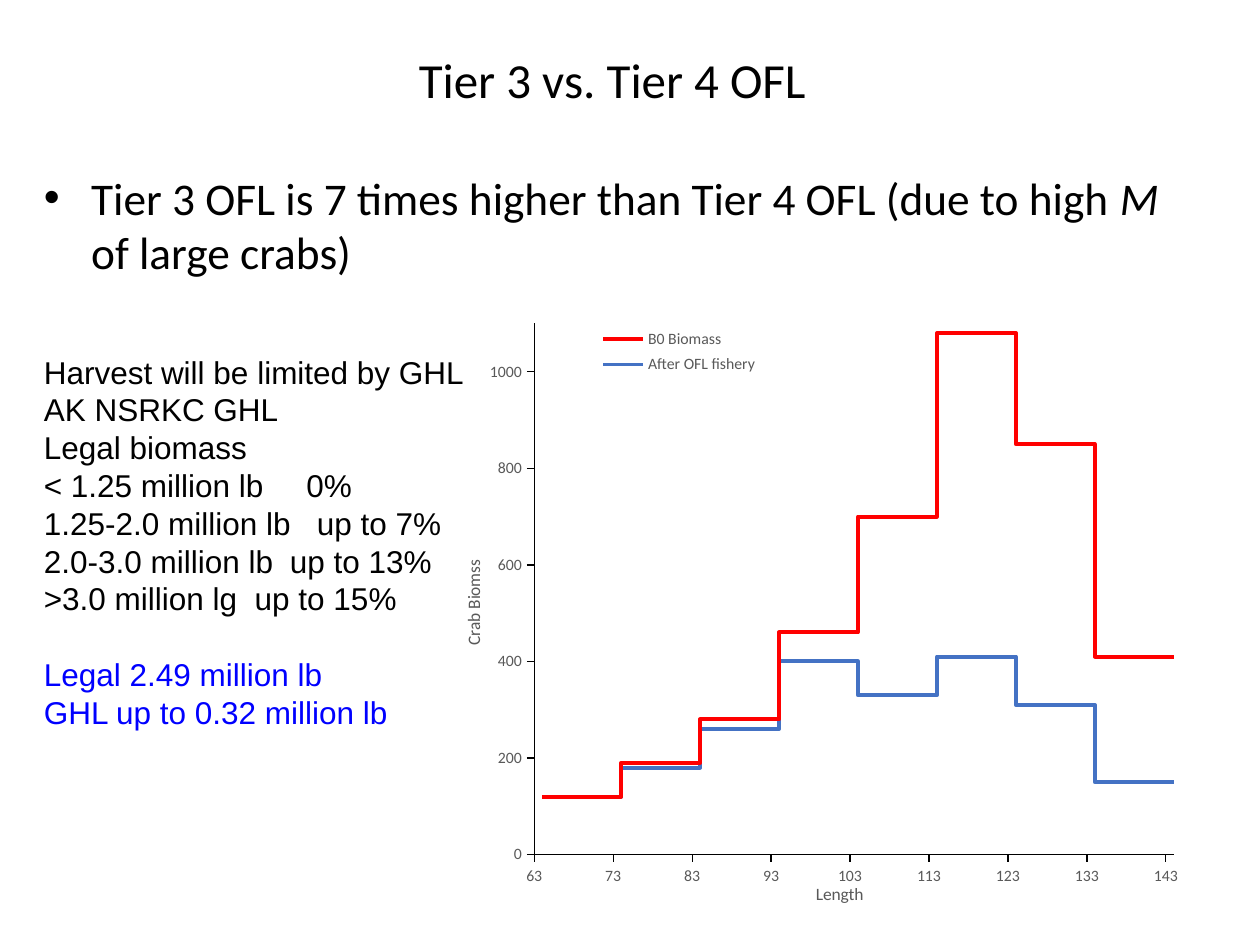
from pptx import Presentation
from pptx.chart.data import XyChartData
from pptx.dml.color import RGBColor
from pptx.enum.chart import XL_CHART_TYPE, XL_LEGEND_POSITION, XL_TICK_MARK
from pptx.enum.text import MSO_ANCHOR, PP_ALIGN
from pptx.oxml import parse_xml
from pptx.oxml.ns import nsdecls, qn
from pptx.util import Pt

SCATTER = XL_CHART_TYPE.XY_SCATTER_LINES_NO_MARKERS
BOTTOM = XL_LEGEND_POSITION.BOTTOM
OUTSIDE, NO_TICK = XL_TICK_MARK.OUTSIDE, XL_TICK_MARK.NONE
MIDDLE, TOP = MSO_ANCHOR.MIDDLE, MSO_ANCHOR.TOP
CENTER, LEFT = PP_ALIGN.CENTER, PP_ALIGN.LEFT

COLORS = {"black": "000000", "grey": "595959", "red": "FF0000",
          "steel": "4472C4", "blue": "0000FF"}

LENGTH_EDGES = range(64, 145, 10)
BIOMASS = [
    ("B0 Biomass", "red", [120, 190, 280, 460, 700, 1080, 850, 410]),
    ("After OFL fishery ", "steel", [120, 180, 260, 400, 330, 410, 310, 150]),
]

# Text, tab stop, paragraph format, colour
HARVEST_RULES = [
    ("Harvest will be limited by GHL", None, {}, "black"),
    ("AK NSRKC GHL", None, {}, "black"),
    ("Legal biomass", None, {}, "black"),
    ("< 1.25 million lb\t0%", 150, {}, "black"),
    ("1.25-2.0 million lb\tup to 7%", 156, {}, "black"),
    ("2.0-3.0 million lb\tup to 13%", 140.5, {}, "black"),
    (">3.0 million lg\tup to 15%", 120.5, {}, "black"),
    ("Legal 2.49 million lb", None, {"space_before": Pt(21.6)}, "blue"),
    ("GHL up to 0.32 million lb", None, {}, "blue"),
]


def rgb(name):
    return RGBColor.from_string(COLORS[name])


def set_all(obj, values):
    for name, value in values.items():
        setattr(obj, name, value)


def place(parent, index, box, inner=False):
    """Give a chart part a fixed place, as fractions of the chart."""
    for old in parent.findall(qn("c:layout")):
        parent.remove(old)
    target = '<c:layoutTarget val="inner"/>' if inner else ""
    modes = "".join(f'<c:{n}Mode val="edge"/>' for n in "xy")
    sizes = "".join(f'<c:{n} val="{v}"/>' for n, v in zip("xywh", box))
    parent.insert(index, parse_xml(
        f'<c:layout {nsdecls("c")}><c:manualLayout>{target}{modes}{sizes}'
        "</c:manualLayout></c:layout>"))


class Deck:
    def __init__(self, slide):
        self.s = slide
        self.heading_font = "Calibri"
        self.body_font = "Arial"

    def style(self, font, size, color="black", name=None, **extra):
        set_all(font, {"name": name or self.heading_font, "size": Pt(size), **extra})
        font.color.rgb = rgb(color)

    def text_box(self, box, wrap=True, anchor=TOP):
        tf = self.s.shapes.add_textbox(*map(Pt, box)).text_frame
        set_all(tf, {"word_wrap": wrap, "vertical_anchor": anchor})
        return tf

    def title(self, text, box):
        p = self.text_box(box, anchor=MIDDLE).paragraphs[0]
        p.alignment = CENTER
        r = p.add_run()
        r.text = text
        self.style(r.font, 28)

    def bullet(self, runs, box):
        p = self.text_box(box).paragraphs[0]
        pPr = p._p.get_or_add_pPr()
        pPr.set("marL", str(Pt(27)))
        pPr.set("indent", str(Pt(-27)))
        pPr.append(parse_xml(f'<a:buFont {nsdecls("a")} typeface="Arial"/>'))
        pPr.append(parse_xml(f'<a:buChar {nsdecls("a")} char="•"/>'))
        for text, italic in runs:
            r = p.add_run()
            r.text = text
            self.style(r.font, 25.9, italic=italic)

    def rules(self, lines, box):
        tf = self.text_box(box, wrap=False)
        for i, (text, stop, fmt, color) in enumerate(lines):
            p = tf.add_paragraph() if i else tf.paragraphs[0]
            set_all(p, {"alignment": LEFT, "line_spacing": Pt(21.6), **fmt})
            if stop:
                p._p.get_or_add_pPr().append(parse_xml(
                    f'<a:tabLst {nsdecls("a")}><a:tab pos="{Pt(stop)}" algn="l"/></a:tabLst>'))
            r = p.add_run()
            r.text = text
            self.style(r.font, 18, color, self.body_font)

    def axis(self, axis, title, scale, title_at, rotation):
        set_all(axis, {"has_major_gridlines": False, "major_tick_mark": OUTSIDE,
                       "minor_tick_mark": NO_TICK, **scale})
        self.style(axis.tick_labels.font, 9, "grey")
        axis.format.line.width = Pt(0.75)
        axis.format.line.color.rgb = rgb("black")
        tf = axis.axis_title.text_frame
        r = tf.paragraphs[0].add_run()
        r.text = title
        self.style(r.font, 10, "grey", bold=False)
        element = axis.axis_title._element
        element.find(".//" + qn("a:bodyPr")).set("rot", str(rotation))
        place(element, 1, title_at)

    def step_chart(self, edges, series, box):
        """Draw each value as a level line between two neighbouring edges."""
        data = XyChartData()
        for name, _, values in series:
            points = data.add_series(name)
            for left, right, value in zip(edges, edges[1:], values):
                points.add_data_point(left, value)
                points.add_data_point(right, value)
        chart = self.s.shapes.add_chart(SCATTER, *map(Pt, box), data).chart
        set_all(chart, {"has_title": False, "has_legend": True})
        self.style(chart.font, 10)
        plot = chart.plots[0]
        plot.vary_by_categories = False
        for line, (_, color, _) in zip(plot.series, series):
            line.smooth = False
            line.format.line.width = Pt(2.25)
            line.format.line.color.rgb = rgb(color)
        self.axis(chart.category_axis, "Length",
                  {"minimum_scale": 63, "maximum_scale": 144, "major_unit": 10},
                  (0.48, 0.96), 0)
        self.axis(chart.value_axis, "Crab Biomss",
                  {"minimum_scale": 0, "maximum_scale": 1100, "major_unit": 200},
                  (0.01, 0.45), -5400000)
        set_all(chart.legend, {"position": BOTTOM, "include_in_layout": False})
        self.style(chart.legend.font, 9, "grey")
        place(chart.legend._element, 1, (0.18, 0.08, 0.25, 0.09))
        place(plot._element.getparent(), 0, (0.11, 0.08, 0.85, 0.84), inner=True)


def main():
    prs = Presentation()
    set_all(prs, {"slide_width": Pt(720), "slide_height": Pt(540)})
    deck = Deck(prs.slides.add_slide(prs.slide_layouts[6]))
    deck.title("Tier 3 vs. Tier 4 OFL ", (18, 18, 670, 54))
    deck.bullet([("Tier 3 OFL is 7 times higher than Tier 4 OFL (due to high ", False),
                 ("M", True), (" of large crabs)", False)], (18, 93.6, 678, 68.4))
    deck.step_chart(LENGTH_EDGES, BIOMASS, (258, 156, 430, 364))
    deck.rules(HARVEST_RULES, (18, 198, 257, 225))
    prs.save("out.pptx")


if __name__ == "__main__":
    main()
